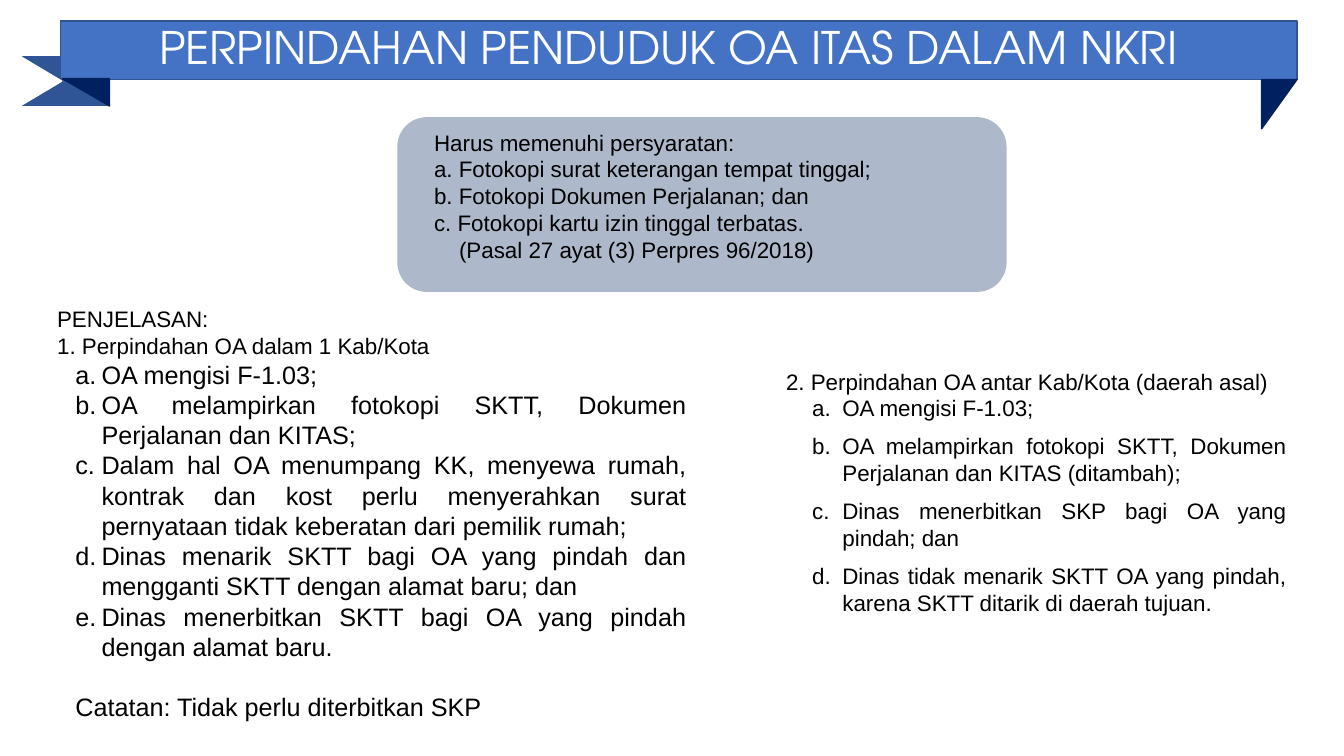
from lxml import etree
from pptx import Presentation
from pptx.dml.color import RGBColor
from pptx.enum.shapes import MSO_SHAPE
from pptx.enum.text import MSO_ANCHOR, MSO_AUTO_SIZE, PP_ALIGN
from pptx.oxml.ns import qn
from pptx.util import Cm, Pt

RECT, ROUNDED = MSO_SHAPE.RECTANGLE, MSO_SHAPE.ROUNDED_RECTANGLE
TRIANGLE, RIGHT_TRIANGLE = MSO_SHAPE.ISOSCELES_TRIANGLE, MSO_SHAPE.RIGHT_TRIANGLE
LEFT, CENTER, JUSTIFY = PP_ALIGN.LEFT, PP_ALIGN.CENTER, PP_ALIGN.JUSTIFY

COLORS = {
    "band": "4472C4", "band_edge": "325491", "tail": "2F5597", "fold": "002060",
    "panel": "ADB9CA", "white": "FFFFFF", "text": "000000",
}
RGB = {name: RGBColor.from_string(value) for name, value in COLORS.items()}


def add_block(shapes, kind, box, fill, line=None, rotation=0):
    sp = shapes.add_shape(kind, *[Cm(v) for v in box])
    sp.rotation = rotation
    sp.shadow.inherit = False
    sp.fill.solid()
    sp.fill.fore_color.rgb = RGB[fill]
    sp.line.color.rgb = RGB[line or fill]
    sp.line.width = Pt(1)


def add_list(shapes, box, lines):
    """Each line is (text, size, align, margin, indent, lettered, before, after)."""
    tf = shapes.add_textbox(*[Cm(v) for v in box]).text_frame
    tf.word_wrap = True
    for i, (text, size, align, margin, indent, lettered, before, after) in enumerate(lines):
        p = tf.add_paragraph() if i else tf.paragraphs[0]
        p.text = text
        p.alignment = align
        p.space_before, p.space_after = Pt(before), Pt(after)
        p.font.size = Pt(size)
        p.font.name = "Arial"
        p.font.color.rgb = RGB["text"]
        pPr = p._p.get_or_add_pPr()
        pPr.set("marL", str(Cm(margin)))
        pPr.set("indent", str(Cm(indent)))
        if lettered:
            bullet = etree.Element(qn("a:buAutoNum"), type="alphaLcPeriod")
            pPr.insert_element_before(bullet, "a:tabLst", "a:defRPr", "a:extLst")


prs = Presentation()
prs.slide_width, prs.slide_height = Cm(33.87), Cm(19.05)
s = prs.slides.add_slide(prs.slide_layouts[5])

# Ribbon
for block in [
    (RECT, (0.58, 1.42, 2.16, 1.24), "tail"),
    (RECT, (1.52, 0.53, 31.17, 1.47), "band", "band_edge"),
    (RIGHT_TRIANGLE, (31.62, 2.18, 1.24, 0.89), "fold", None, 90),
    (RIGHT_TRIANGLE, (1.57, 1.98, 1.19, 0.69), "fold", None, 180),
    (TRIANGLE, (0.25, 1.45, 1.42, 1.19), "white", None, 90),
]:
    add_block(s.shapes, *block)

# Title, brought in front of the ribbon
title = s.shapes.title
title.left, title.top, title.width, title.height = Cm(2.59), Cm(0.43), Cm(28.52), Cm(1.68)
title._element.getparent().append(title._element)
tf = title.text_frame
tf.text = "PERPINDAHAN PENDUDUK OA ITAS DALAM NKRI"
tf.auto_size = MSO_AUTO_SIZE.NONE
tf.vertical_anchor = MSO_ANCHOR.MIDDLE
p = tf.paragraphs[0]
p.alignment = CENTER
p.line_spacing = 0.9
p.font.size = Pt(32)
p.font.name = "TeX Gyre Adventor"
p.font.color.rgb = RGB["white"]

# Requirements
add_block(s.shapes, ROUNDED, (10.03, 2.97, 15.32, 4.37), "panel")
requirements = [
    "Harus memenuhi persyaratan:",
    "a. Fotokopi surat keterangan tempat tinggal;",
    "b. Fotokopi Dokumen Perjalanan; dan",
    "c. Fotokopi kartu izin tinggal terbatas.",
]
lines = [(text, 16, JUSTIFY, 0, 0, False, 0, 0) for text in requirements]
lines.append(("(Pasal 27 ayat (3) Perpres 96/2018)", 16, JUSTIFY, 0.63, 0, False, 0, 0))
add_list(s.shapes, (10.69, 3.12, 14.3, 3.68), lines)

# Moves within one district
headings = ["PENJELASAN:", "1. Perpindahan OA dalam 1 Kab/Kota"]
within_steps = [
    "OA mengisi F-1.03;",
    "OA melampirkan fotokopi SKTT, Dokumen Perjalanan dan KITAS;",
    "Dalam hal OA menumpang KK, menyewa rumah, kontrak dan kost perlu menyerahkan "
    "surat pernyataan tidak keberatan dari pemilik rumah;",
    "Dinas menarik SKTT bagi OA yang pindah dan mengganti SKTT dengan alamat baru; dan",
    "Dinas menerbitkan SKTT bagi OA yang pindah dengan alamat baru.",
]
lines = [(text, 16, LEFT, 0, 0, False, 0, 0) for text in headings]
lines += [(text, 18, JUSTIFY, 1.12, -0.66, True, 0, 0) for text in within_steps]
lines.append(("Catatan: Tidak perlu diterbitkan SKP", 18, LEFT, 1.12, -0.66, False, 21.6, 0))
add_list(s.shapes, (1.19, 7.57, 16.36, 10.85), lines)

# Moves between districts
between_steps = [
    "OA mengisi F-1.03;",
    "OA melampirkan fotokopi SKTT, Dokumen Perjalanan dan KITAS (ditambah);",
    "Dinas menerbitkan SKP bagi OA yang pindah; dan",
    "Dinas tidak menarik SKTT OA yang pindah, karena SKTT ditarik di daerah tujuan.",
]
lines = [("2. Perpindahan OA antar Kab/Kota (daerah asal)", 16, LEFT, 0, 0, False, 0, 0)]
lines += [(text, 16, JUSTIFY, 1.42, -0.76, True, 0, 8) for text in between_steps]
add_list(s.shapes, (19.56, 9.14, 13.11, 6.58), lines)

prs.save("out.pptx")
